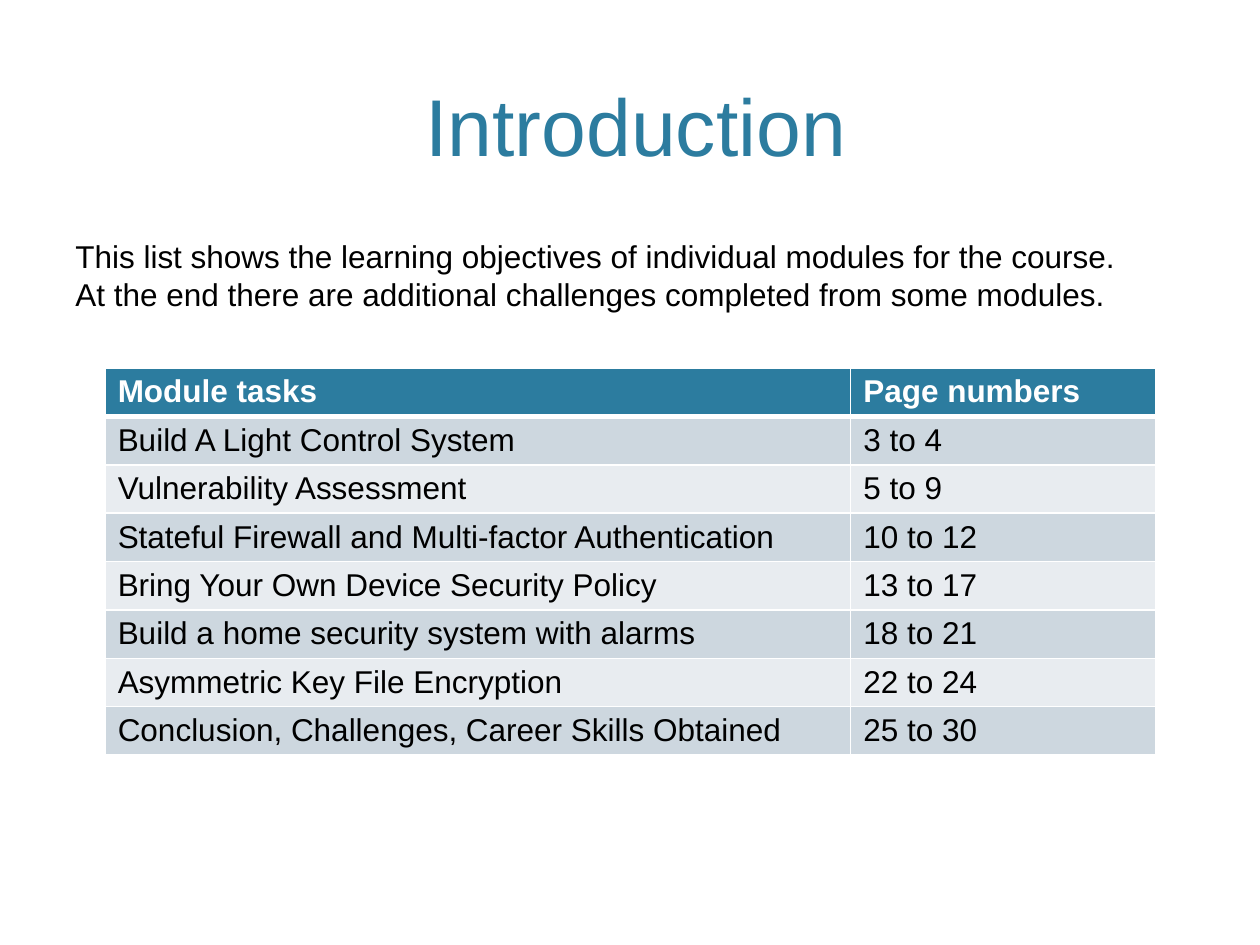
from dataclasses import dataclass

from lxml.etree import SubElement
from pptx import Presentation
from pptx.dml.color import RGBColor
from pptx.enum.text import MSO_ANCHOR, PP_ALIGN
from pptx.oxml.ns import qn
from pptx.util import Cm, Pt


@dataclass(frozen=True)
class Theme:
    font: str = "Arial"
    accent: str = "2C7C9F"
    text: str = "000000"
    light: str = "FFFFFF"
    bands: tuple = ("CDD7DF", "E8ECF0")
    title_size: int = 46
    body_size: int = 18
    border: int = 1
    header_border: int = 3


@dataclass(frozen=True)
class Box:
    left: float
    top: float
    width: float
    height: float

    def lengths(self):
        return [Cm(value) for value in (self.left, self.top, self.width, self.height)]


THEME = Theme()
INTRODUCTION = [
    "This list shows the learning objectives of individual modules for the course.",
    "At the end there are additional challenges completed from some modules.",
]
MODULES = [
    ("Module tasks", "Page numbers"),
    ("Build A Light Control System", "3 to 4"),
    ("Vulnerability Assessment", "5 to 9"),
    ("Stateful Firewall and Multi-factor Authentication", "10 to 12"),
    ("Bring Your Own Device Security Policy", "13 to 17"),
    ("Build a home security system with alarms", "18 to 21"),
    ("Asymmetric Key File Encryption", "22 to 24"),
    ("Conclusion, Challenges, Career Skills Obtained", "25 to 30"),
]
TASK_COLUMN_SHARE = 0.71


def format_text(frame, size, color, bold=False):
    for para in frame.paragraphs:
        for span in para.runs:
            span.font.name = THEME.font
            span.font.size = Pt(size)
            span.font.bold = bold
            span.font.color.rgb = RGBColor.from_string(color)


def place_title(page, box, text):
    title = page.shapes.title
    title.left, title.top, title.width, title.height = box.lengths()
    frame = title.text_frame
    frame.text = text
    frame.vertical_anchor = MSO_ANCHOR.BOTTOM
    frame.paragraphs[0].alignment = PP_ALIGN.CENTER
    format_text(frame, THEME.title_size, THEME.accent)


def place_introduction(page, box, lines):
    frame = page.shapes.add_textbox(*box.lengths()).text_frame
    frame.word_wrap = True
    frame.text = "\n".join(lines)
    format_text(frame, THEME.body_size, THEME.text)


def draw_borders(cell, widths):
    properties = cell._tc.get_or_add_tcPr()
    for side, width in widths.items():
        line = SubElement(properties, qn(f"a:ln{side}"), w=str(Pt(width)))
        fill = SubElement(line, qn("a:solidFill"))
        SubElement(fill, qn("a:srgbClr"), val=THEME.light)


def style_cell(cell, row_number):
    header = row_number == 0
    widths = dict.fromkeys("LRTB", THEME.border)
    if header:
        widths["B"] = THEME.header_border
    elif row_number == 1:
        widths["T"] = THEME.header_border
    draw_borders(cell, widths)
    color = THEME.accent if header else THEME.bands[(row_number - 1) % 2]
    cell.fill.solid()
    cell.fill.fore_color.rgb = RGBColor.from_string(color)
    text_color = THEME.light if header else THEME.text
    format_text(cell.text_frame, THEME.body_size, text_color, header)


def place_modules(page, box, rows):
    table = page.shapes.add_table(len(rows), len(rows[0]), *box.lengths()).table
    shares = (TASK_COLUMN_SHARE, 1 - TASK_COLUMN_SHARE)
    for column, share in zip(table.columns, shares):
        column.width = Cm(box.width * share)
    for row_number, values in enumerate(rows):
        table.rows[row_number].height = Cm(box.height / len(rows))
        for column_number, value in enumerate(values):
            cell = table.cell(row_number, column_number)
            cell.text_frame.text = value
            style_cell(cell, row_number)


def main():
    deck = Presentation()
    deck.slide_width, deck.slide_height = Cm(25.4), Cm(19.05)
    page = deck.slides.add_slide(deck.slide_layouts[5])
    place_title(page, Box(7.2, 1.07, 11.23, 2.54), "Introduction")
    place_modules(page, Box(2.12, 7.42, 21.17, 7.8), MODULES)
    place_introduction(page, Box(1.27, 4.65, 23.37, 2.57), INTRODUCTION)
    deck.save("out.pptx")


if __name__ == "__main__":
    main()
